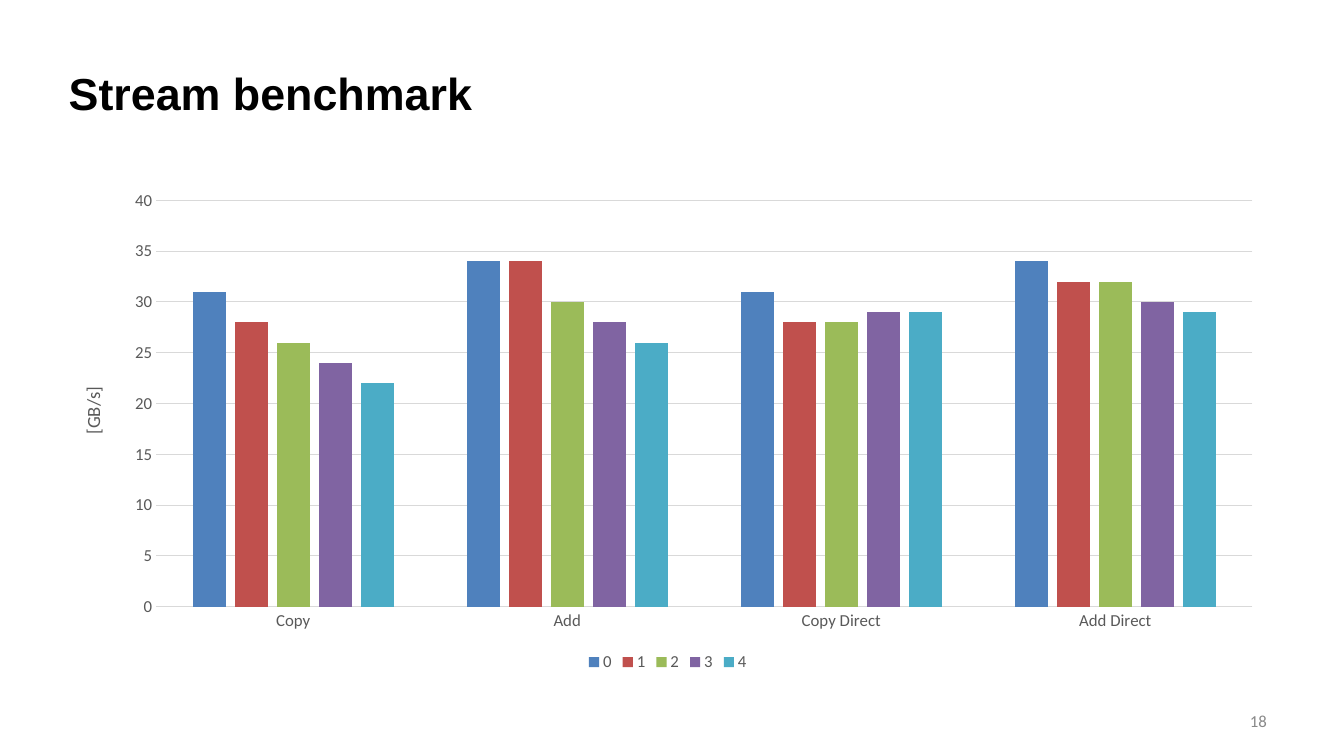
"""Build the stream benchmark slide with its clustered column chart."""
from dataclasses import dataclass

from lxml import etree
from pptx import Presentation
from pptx.chart.data import CategoryChartData
from pptx.dml.color import RGBColor
from pptx.enum.chart import XL_CHART_TYPE, XL_LEGEND_POSITION, XL_TICK_MARK
from pptx.enum.text import MSO_ANCHOR, PP_ALIGN
from pptx.oxml.ns import qn
from pptx.util import Inches, Pt

COLUMN = XL_CHART_TYPE.COLUMN_CLUSTERED
BOTTOM = XL_LEGEND_POSITION.BOTTOM
NO_TICK = XL_TICK_MARK.NONE
MIDDLE = MSO_ANCHOR.MIDDLE
LEFT, RIGHT = PP_ALIGN.LEFT, PP_ALIGN.RIGHT

WIDTH, HEIGHT = Inches(13.333), Inches(7.5)
COLS, ROWS = 320, 180


@dataclass(frozen=True)
class Theme:
    head: str = "Arial"
    body: str = "Calibri"
    ink: str = "000000"
    text: str = "595959"
    pale: str = "898989"
    rule: str = "D9D9D9"
    title: float = 32
    unit: float = 13.3
    label: float = 12
    line: float = 0.75


@dataclass(frozen=True)
class Box:
    col: float
    row: float
    wide: float
    high: float

    def place(self) -> tuple[int, int, int, int]:
        x, y = WIDTH / COLS, HEIGHT / ROWS
        return (round(self.col * x), round(self.row * y),
                round(self.wide * x), round(self.high * y))


@dataclass(frozen=True)
class Label:
    text: str
    box: Box
    face: str
    size: float
    color: str
    bold: bool
    align: PP_ALIGN


@dataclass(frozen=True)
class Series:
    name: str
    color: str
    values: tuple[float, ...]


THEME = Theme()
LABELS = (
    Label("Stream benchmark", Box(14, 7, 290, 30), THEME.head, THEME.title,
          THEME.ink, True, LEFT),
    Label("18", Box(229.5, 166.75, 74.5, 9.6), THEME.body, THEME.label,
          THEME.pale, False, RIGHT),
)
CHART = Box(14, 43, 290, 118)
PLOT = {"x": 0.08, "y": 0.04, "w": 0.9, "h": 0.82}
TESTS = ("Copy", "Add", "Copy Direct", "Add Direct")
SERIES = (
    Series("0", "4F81BD", (31, 34, 31, 34)),
    Series("1", "C0504D", (28, 34, 28, 32)),
    Series("2", "9BBB59", (26, 30, 28, 32)),
    Series("3", "8064A2", (24, 28, 29, 30)),
    Series("4", "4BACC6", (22, 26, 29, 29)),
)


def style(font, face: str, size: float, color: str, bold: bool = False) -> None:
    font.name, font.size, font.bold = face, Pt(size), bold
    font.color.rgb = RGBColor.from_string(color)


def rule(line) -> None:
    line.width = Pt(THEME.line)
    line.color.rgb = RGBColor.from_string(THEME.rule)


def write(slide, label: Label) -> None:
    frame = slide.shapes.add_textbox(*label.box.place()).text_frame
    frame.word_wrap = True
    frame.vertical_anchor = MIDDLE
    para = frame.paragraphs[0]
    para.text, para.alignment = label.text, label.align
    style(para.font, label.face, label.size, label.color, label.bold)


def fix_plot(chart) -> None:
    area = chart.element.find(".//" + qn("c:plotArea"))
    for old in area.findall(qn("c:layout")):
        area.remove(old)
    layout = etree.Element(qn("c:layout"))
    manual = etree.SubElement(layout, qn("c:manualLayout"))
    parts = {"layoutTarget": "inner", "xMode": "edge", "yMode": "edge", **PLOT}
    for tag, value in parts.items():
        etree.SubElement(manual, qn(f"c:{tag}")).set("val", str(value))
    area.insert(0, layout)


def style_axes(chart) -> None:
    tests, rate = chart.category_axis, chart.value_axis
    for axis in (tests, rate):
        axis.major_tick_mark = axis.minor_tick_mark = NO_TICK
        style(axis.tick_labels.font, THEME.body, THEME.label, THEME.text)
    rule(tests.format.line)
    rate.format.line.fill.background()
    rate.minimum_scale, rate.maximum_scale, rate.major_unit = 0, 40, 5
    rule(rate.major_gridlines.format.line)
    frame = rate.axis_title.text_frame
    frame.text = "[GB/s]"
    style(frame.paragraphs[0].font, THEME.body, THEME.unit, THEME.text)
    for body in chart.element.xpath(".//c:valAx/c:title//a:bodyPr"):
        body.set("rot", "-5400000")
        body.set("vert", "horz")


def draw_chart(slide) -> None:
    data = CategoryChartData()
    data.categories = TESTS
    for item in SERIES:
        data.add_series(item.name, item.values)
    chart = slide.shapes.add_chart(COLUMN, *CHART.place(), data).chart
    style(chart.font, THEME.body, THEME.label, THEME.text)
    chart.has_title = False
    chart.has_legend = True
    chart.legend.position = BOTTOM
    chart.legend.include_in_layout = False
    style(chart.legend.font, THEME.body, THEME.label, THEME.text)
    plot = chart.plots[0]
    plot.gap_width, plot.overlap, plot.vary_by_categories = 219, -27, False
    for bars, item in zip(plot.series, SERIES):
        bars.format.fill.solid()
        bars.format.fill.fore_color.rgb = RGBColor.from_string(item.color)
    style_axes(chart)
    fix_plot(chart)


def main() -> None:
    deck = Presentation()
    deck.slide_width, deck.slide_height = WIDTH, HEIGHT
    slide = deck.slides.add_slide(deck.slide_layouts[6])
    for label in LABELS:
        write(slide, label)
    draw_chart(slide)
    deck.save("out.pptx")


if __name__ == "__main__":
    main()
